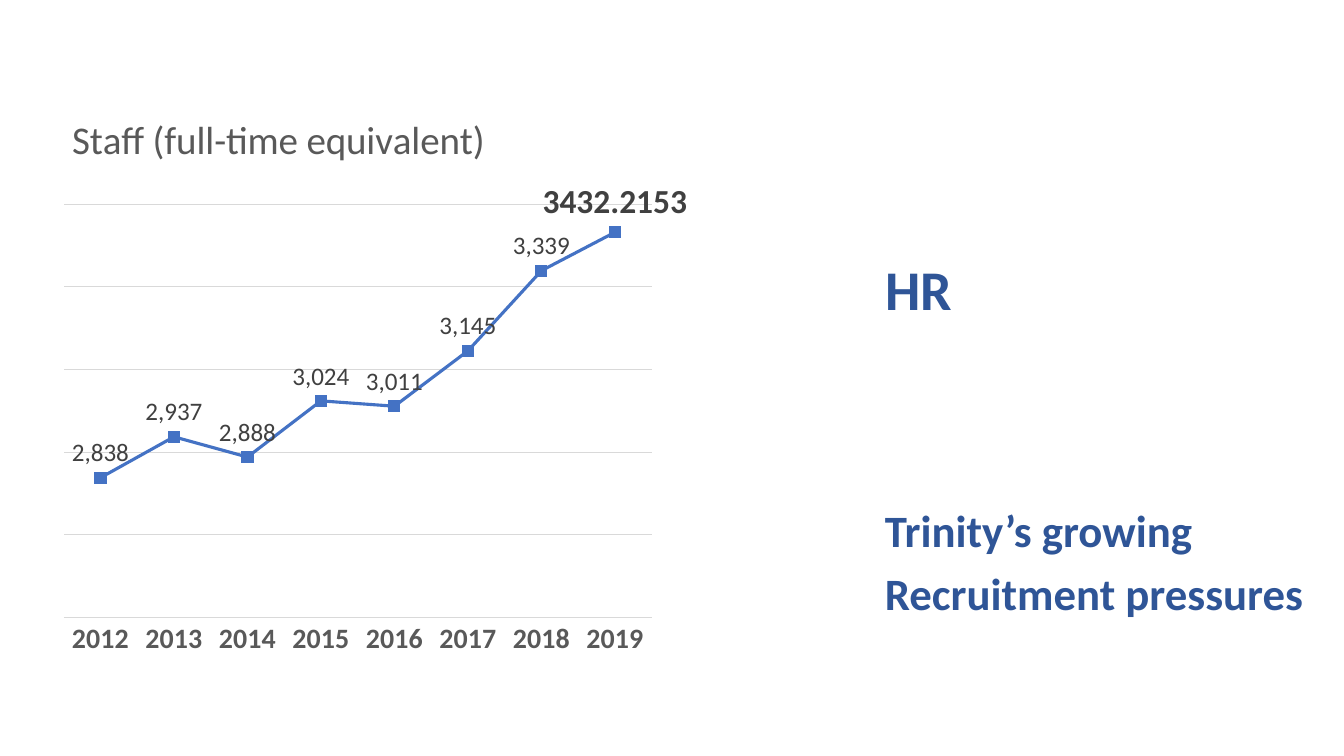
"""Build the HR slide with the staff growth chart."""
import pptx
import pptx.chart.data
import pptx.dml.color
import pptx.enum.chart
import pptx.enum.text
import pptx.util
from pptx.util import Cm

COLORS = {"heading": "2F5597", "line": "4472C4", "grid": "D9D9D9",
          "axis": "595959", "label": "404040"}
FONT = "Calibri"
STAFF = {"2012": 2838, "2013": 2937, "2014": 2888, "2015": 3024,
         "2016": 3011, "2017": 3145, "2018": 3339, "2019": 3432}


def rgb(color):
    """Return the named colour."""
    return pptx.dml.color.RGBColor.from_string(COLORS[color])


def format_font(font, size, color, bold=False):
    """Set typeface, size, colour and weight."""
    font.name = FONT
    font.size = pptx.util.Pt(size)
    font.bold = bold
    font.color.rgb = rgb(color)


def write_text(paragraph, text, spacing=None, before=0, **font_format):
    """Write one formatted run into a paragraph."""
    run = paragraph.add_run()
    run.text = text
    format_font(run.font, **font_format)
    paragraph.alignment = pptx.enum.text.PP_ALIGN.LEFT
    paragraph.space_before = pptx.util.Pt(before)
    if spacing:
        paragraph.line_spacing = spacing


def place_chart_part(part, index, **fractions):
    """Give a chart part a manual layout in fractions of the chart."""
    tag = "{http://schemas.openxmlformats.org/drawingml/2006/chart}"
    for old in part.findall(tag + "layout"):
        part.remove(old)
    layout = part.makeelement(tag + "layout", {})
    manual = layout.makeelement(tag + "manualLayout", {})
    layout.append(manual)
    settings = {"xMode": "edge", "yMode": "edge", **fractions}
    if "w" in fractions:
        settings = {"layoutTarget": "inner", **settings}
    for name, value in settings.items():
        manual.append(manual.makeelement(tag + name, {"val": str(value)}))
    part.insert(index, layout)


class StaffSlide:
    """Hold the heading style and the current slide."""

    def __init__(self, presentation):
        """Add a title-only slide."""
        self.slide = presentation.slides.add_slide(presentation.slide_layouts[5])
        self.style = {"color": "heading", "bold": True, "spacing": 0.9}

    def title(self, text, left, top, width, height):
        """Place and fill the title."""
        heading = self.slide.shapes.title
        heading.left, heading.top = left, top
        heading.width, heading.height = width, height
        frame = heading.text_frame
        frame.word_wrap = True
        frame.vertical_anchor = pptx.enum.text.MSO_ANCHOR.MIDDLE
        write_text(frame.paragraphs[0], text, size=40, **self.style)

    def points(self, lines, *box):
        """Add a text box with one paragraph per line."""
        frame = self.slide.shapes.add_textbox(*box).text_frame
        frame.word_wrap = True
        for number, line in enumerate(lines):
            paragraph = frame.add_paragraph() if number else frame.paragraphs[0]
            write_text(paragraph, line, size=32, before=10 if number else 0,
                       **self.style)

    def line_chart(self, heading, values, latest_label, *box):
        """Add a marked line chart that stresses its last value."""
        staff_data = pptx.chart.data.CategoryChartData(number_format="#,##0")
        staff_data.categories = list(values)
        staff_data.add_series("Series 1", list(values.values()))
        chart = self.slide.shapes.add_chart(
            pptx.enum.chart.XL_CHART_TYPE.LINE_MARKERS, *box, staff_data).chart
        format_font(chart.font, 10, "axis")
        chart.has_legend = False
        title = chart.chart_title
        write_text(title.text_frame.paragraphs[0], heading, size=28, color="axis")
        place_chart_part(title._element, 1, x=0.02, y=0)
        place_chart_part(chart._chartSpace.chart.plotArea, 0,
                         x=0.018, y=0.175, w=0.93, h=0.736)
        self.axes(chart)
        chart.plots[0].vary_by_categories = False
        self.series(chart.plots[0].series[0], len(values) - 1, latest_label)

    def axes(self, chart):
        """Format the years and the gridlines."""
        years, scale = chart.category_axis, chart.value_axis
        years.major_tick_mark = pptx.enum.chart.XL_TICK_MARK.NONE
        format_font(years.tick_labels.font, 20, "axis", bold=True)
        scale.visible = False
        scale.minimum_scale, scale.maximum_scale = 2500, 3500
        scale.major_unit = 200
        scale.has_major_gridlines = True
        for line in (years.format.line, scale.major_gridlines.format.line):
            line.color.rgb = rgb("grid")
            line.width = pptx.util.Pt(0.75)

    def series(self, staff, latest_index, latest_label):
        """Format the line, its markers and its labels."""
        above = pptx.enum.chart.XL_LABEL_POSITION.ABOVE
        staff.smooth = False
        staff.format.line.color.rgb = rgb("line")
        staff.format.line.width = pptx.util.Pt(2.25)
        staff.marker.style = pptx.enum.chart.XL_MARKER_STYLE.SQUARE
        staff.marker.size = 8
        staff.marker.format.fill.solid()
        staff.marker.format.fill.fore_color.rgb = rgb("line")
        staff.marker.format.line.color.rgb = rgb("line")
        labels = staff.data_labels
        labels.show_value = True
        labels.number_format = "#,##0"
        labels.number_format_is_linked = False
        labels.position = above
        format_font(labels.font, 18, "label")
        latest = staff.points[latest_index].data_label
        write_text(latest.text_frame.paragraphs[0], latest_label,
                   size=24, color="label", bold=True)
        latest.position = above


def main():
    """Build and save the presentation."""
    presentation = pptx.Presentation()
    presentation.slide_width, presentation.slide_height = Cm(33.87), Cm(19.05)
    page = StaffSlide(presentation)
    page.line_chart("Staff (full-time equivalent)", STAFF, "3432.2153",
                    Cm(1.32), Cm(2.67), Cm(16), Cm(14.15))
    page.points(["Trinity’s growing", "Recruitment pressures"],
                Cm(22.05), Cm(12.7), Cm(11.6), Cm(4.57))
    page.title("HR", Cm(22.05), Cm(2.21), Cm(10.46), Cm(10.31))
    presentation.save("out.pptx")


if __name__ == "__main__":
    main()
